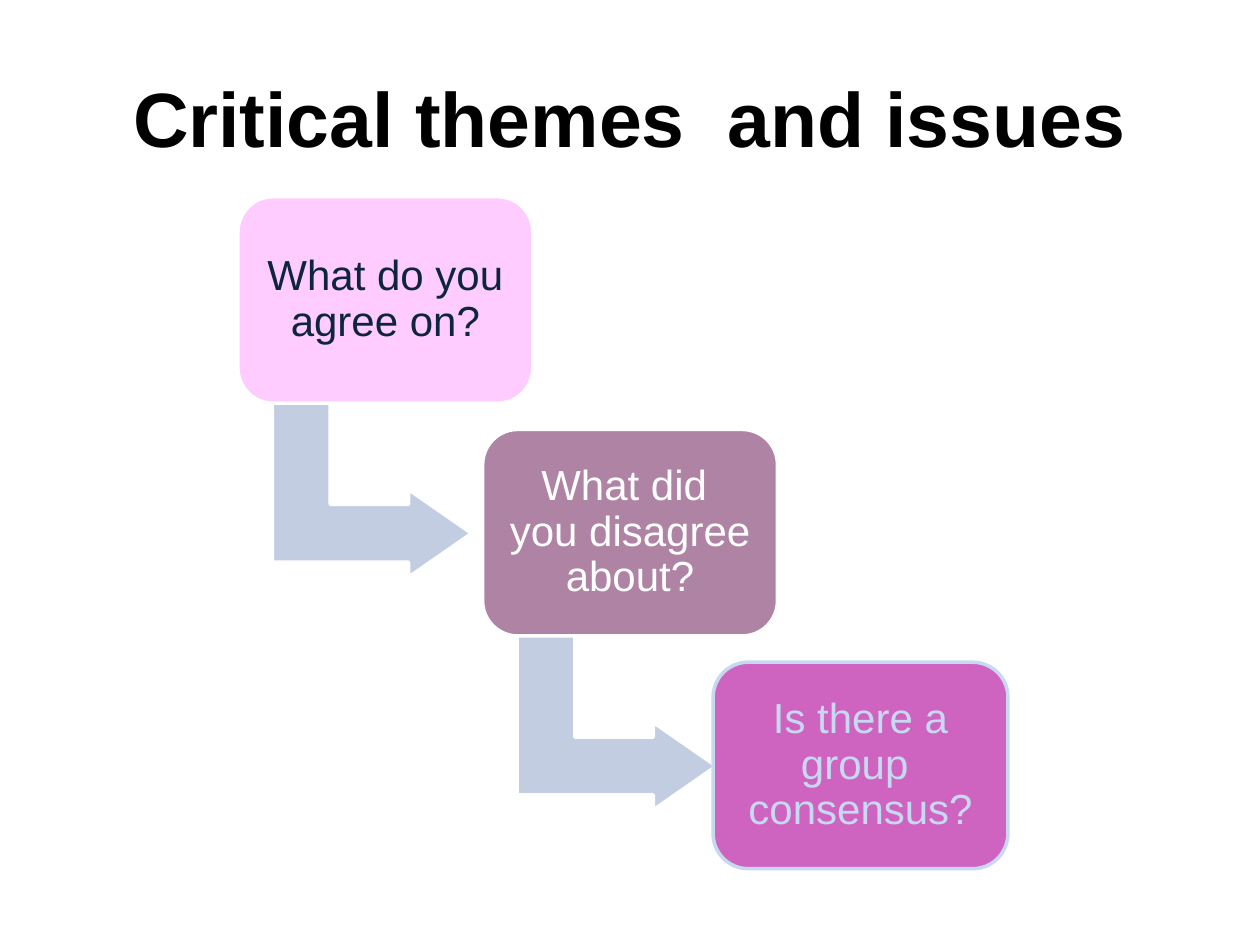
from pptx import Presentation
from pptx.dml.color import RGBColor
from pptx.enum import shapes, text
from pptx.util import Pt

HUES = {
    "black": "000000", "white": "FFFFFF", "navy": "0F243E", "sky": "C6D9F1",
    "arrow": "C2CDE1", "pink": "FFCCFF", "mauve": "AF83A3", "orchid": "CF63C0",
}


class Deck:
    font = "Arial"
    edge = 2
    inset = 7.2

    def __init__(self, wide, high):
        self.prs = Presentation()
        self.prs.slide_width, self.prs.slide_height = Pt(wide), Pt(high)
        self.slide = self.prs.slides.add_slide(self.prs.slide_layouts[5])

    def hue(self, name):
        return RGBColor.from_string(HUES[name])

    def label(self, frame, words, size, color, bold=False):
        frame.text = words
        frame.word_wrap = True
        frame.vertical_anchor = text.MSO_ANCHOR.MIDDLE
        para = frame.paragraphs[0]
        para.alignment = text.PP_ALIGN.CENTER
        font = para.runs[0].font
        font.name, font.size, font.bold = self.font, Pt(size), bold
        font.color.rgb = self.hue(color)
        return para

    def title(self, words, left, top, wide, high):
        head = self.slide.shapes.title
        head.left, head.top, head.width, head.height = map(Pt, (left, top, wide, high))
        self.label(head.text_frame, words, 44, "black", True)

    def shape(self, kind, area, fill, line, ratios):
        item = self.slide.shapes.add_shape(kind, *map(Pt, area))
        item.shadow.inherit = False
        item.fill.solid()
        item.fill.fore_color.rgb = self.hue(fill)
        item.line.color.rgb = self.hue(line)
        item.line.width = Pt(self.edge)
        for i, ratio in enumerate(ratios):
            item.adjustments[i] = ratio
        return item

    def box(self, words, area, fill, line, ink):
        item = self.shape(shapes.MSO_SHAPE.ROUNDED_RECTANGLE, area, fill, line, [0.17])
        frame = item.text_frame
        frame.margin_left = frame.margin_right = Pt(self.inset)
        frame.margin_top = frame.margin_bottom = Pt(self.inset)
        self.label(frame, words, 24, ink).line_spacing = 0.9

    def arrow(self, area):
        item = self.shape(shapes.MSO_SHAPE.BENT_UP_ARROW, area, "arrow", "white",
                          [0.33, 0.25, 0.36])
        item.rotation = 90


def main():
    deck = Deck(720, 540)
    deck.title("Critical themes  and issues", 36, 21.6, 648, 90)
    steps = [
        ("What do you agree on?", 136, "pink", "white", "navy"),
        ("What did  you disagree about?", 275.8, "mauve", "white", "white"),
        ("Is there a group  consensus?", 407.5, "orchid", "sky", "sky"),
    ]
    for i, (words, left, fill, line, ink) in enumerate(steps):
        top = 112.4 + i * 133
        if i < len(steps) - 1:
            deck.arrow((left + 26.6, top + 110.5, 100, 113.8))
        deck.box(words, (left, top, 168.5, 118), fill, line, ink)
    deck.prs.save("out.pptx")


if __name__ == "__main__":
    main()
